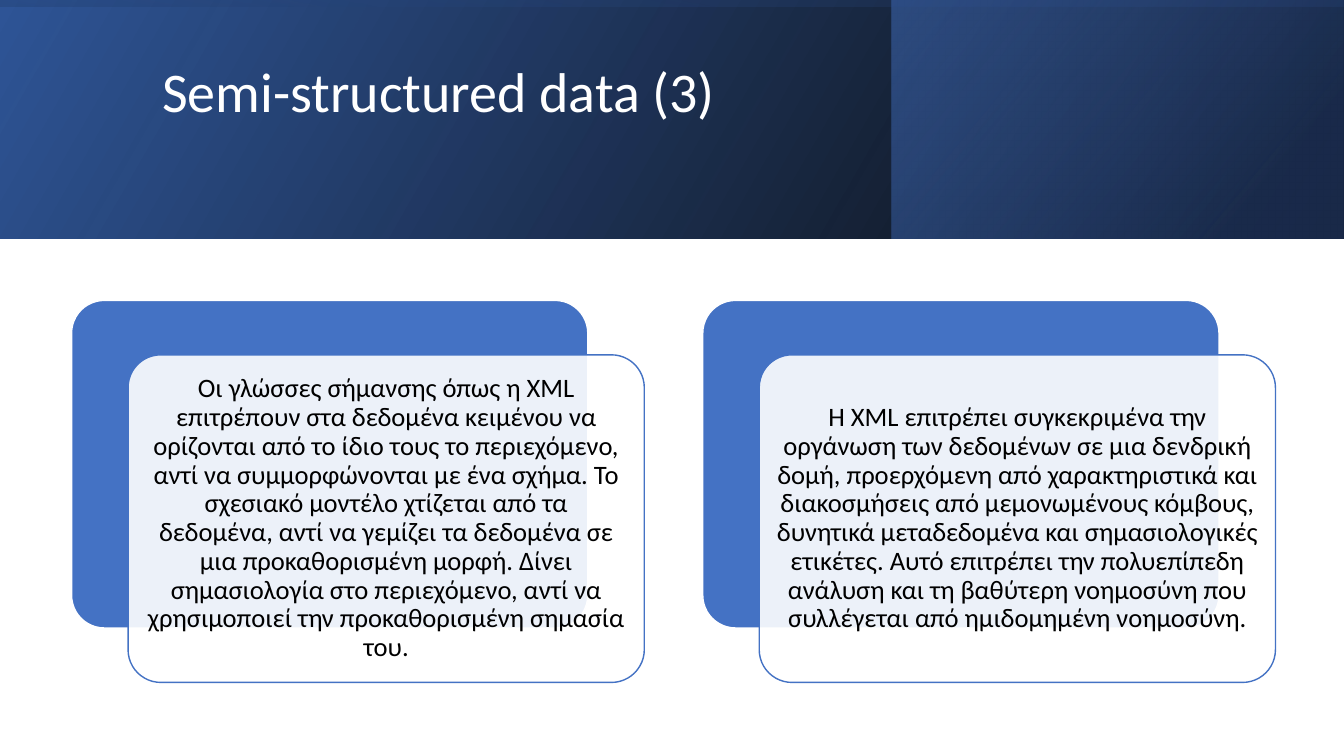
from dataclasses import dataclass

import pptx
import pptx.dml.color
import pptx.enum.shapes
import pptx.enum.text
import pptx.oxml.ns
import pptx.oxml.xmlchemy
import pptx.util
from pptx.util import Inches

SHAPES = pptx.enum.shapes.MSO_SHAPE
ALIGN = pptx.enum.text.PP_ALIGN


@dataclass(frozen=True)
class Theme:
    font: str = "Calibri"
    title_size: int = 40
    body_size: int = 19
    white: str = "FFFFFF"
    black: str = "000000"
    blue: str = "4472C4"
    deep_blue: str = "2F5597"
    navy: str = "203864"


@dataclass(frozen=True)
class Stop:
    position: float
    color: str
    opacity: int


@dataclass(frozen=True)
class Band:
    """One gradient layer of the header; angle is clockwise."""
    left: float
    top: float
    width: float
    height: float
    stops: tuple[Stop, Stop]
    angle: int
    rotation: int = 0


THEME = Theme()
SLIDE_WIDTH, SLIDE_HEIGHT, HEADER_HEIGHT = 13.33, 7.5, 2.37

BANDS = (
    Band(0, 0, SLIDE_WIDTH, HEADER_HEIGHT,
         (Stop(0, THEME.black, 96), Stop(1, THEME.deep_blue, 100)), 330),
    Band(8.84, 0, 4.48, HEADER_HEIGHT,
         (Stop(0.19, THEME.navy, 68), Stop(1, THEME.blue, 48)), 320),
    Band(5.48, -5.48, HEADER_HEIGHT, SLIDE_WIDTH,
         (Stop(0.23, THEME.deep_blue, 16), Stop(0.99, THEME.black, 45)), 350, 270),
)

CARD_LEFT, CARD_TOP, CARD_PITCH = 0.71, 2.98, 6.26
CARD_WIDTH, CARD_HEIGHT = 5.12, 3.25
PANEL_SHIFT_X, PANEL_SHIFT_Y, TEXT_INSET = 0.56, 0.54, 0.1
CARD_TEXTS = (
    "Οι γλώσσες σήμανσης όπως η XML επιτρέπουν στα δεδομένα κειμένου να "
    "ορίζονται από το ίδιο τους το περιεχόμενο, αντί να συμμορφώνονται με ένα "
    "σχήμα. Το σχεσιακό μοντέλο χτίζεται από τα δεδομένα, αντί να γεμίζει τα "
    "δεδομένα σε μια προκαθορισμένη μορφή. Δίνει σημασιολογία στο περιεχόμενο, "
    "αντί να χρησιμοποιεί την προκαθορισμένη σημασία του.",
    "Η XML επιτρέπει συγκεκριμένα την οργάνωση των δεδομένων σε μια δενδρική "
    "δομή, προερχόμενη από χαρακτηριστικά και διακοσμήσεις από μεμονωμένους "
    "κόμβους, δυνητικά μεταδεδομένα και σημασιολογικές ετικέτες. Αυτό επιτρέπει "
    "την πολυεπίπεδη ανάλυση και τη βαθύτερη νοημοσύνη που συλλέγεται από "
    "ημιδομημένη νοημοσύνη.",
)


def rgb(color: str) -> pptx.dml.color.RGBColor:
    return pptx.dml.color.RGBColor.from_string(color)


def set_opacity(shape, opacities: list[int]) -> None:
    """Give the fill colours of a shape, in order, their opacity in percent."""
    name = pptx.oxml.ns.qn("a:srgbClr")
    colors = list(shape._element.spPr.iter(name))
    for color, opacity in zip(colors, opacities):
        alpha = pptx.oxml.xmlchemy.OxmlElement("a:alpha")
        alpha.set("val", str(opacity * 1000))
        color.append(alpha)


def add_band(page, band: Band) -> None:
    shape = page.shapes.add_shape(
        SHAPES.RECTANGLE, Inches(band.left), Inches(band.top),
        Inches(band.width), Inches(band.height))
    shape.shadow.inherit = False
    shape.line.fill.background()
    shape.rotation = band.rotation
    shape._element.spPr.xfrm.set("flipH", "1")
    shape.fill.gradient()
    shape.fill.gradient_angle = 360 - band.angle
    for target, stop in zip(shape.fill.gradient_stops, band.stops):
        target.position = stop.position
        target.color.rgb = rgb(stop.color)
    set_opacity(shape, [stop.opacity for stop in band.stops])


def add_rounded(page, left: float, top: float, *, fill: str, line: str,
                opacity: int = 100) -> None:
    shape = page.shapes.add_shape(
        SHAPES.ROUNDED_RECTANGLE, Inches(left), Inches(top),
        Inches(CARD_WIDTH), Inches(CARD_HEIGHT))
    shape.adjustments[0] = 0.1
    shape.shadow.inherit = False
    shape.fill.solid()
    shape.fill.fore_color.rgb = rgb(fill)
    if opacity < 100:
        set_opacity(shape, [opacity])
    shape.line.color.rgb = rgb(line)
    shape.line.width = pptx.util.Pt(1)


def add_text(page, text: str, *, left: float, top: float, width: float,
             height: float, size: int, color: str, align=ALIGN.LEFT,
             side_inset: float = 0.1, top_inset: float = 0.05,
             bottom_inset: float = 0.05) -> None:
    box = page.shapes.add_textbox(
        Inches(left), Inches(top), Inches(width), Inches(height))
    frame = box.text_frame
    frame.word_wrap = True
    frame.vertical_anchor = pptx.enum.text.MSO_ANCHOR.MIDDLE
    frame.margin_left = frame.margin_right = Inches(side_inset)
    frame.margin_top = Inches(top_inset)
    frame.margin_bottom = Inches(bottom_inset)
    para = frame.paragraphs[0]
    para.alignment = align
    para.line_spacing = 0.9
    span = para.add_run()
    span.text = text
    span.font.name = THEME.font
    span.font.size = pptx.util.Pt(size)
    span.font.color.rgb = rgb(color)


def add_card(page, left: float, text: str) -> None:
    panel_left, panel_top = left + PANEL_SHIFT_X, CARD_TOP + PANEL_SHIFT_Y
    add_rounded(page, left, CARD_TOP, fill=THEME.blue, line=THEME.white)
    add_rounded(page, panel_left, panel_top, fill=THEME.white,
                line=THEME.blue, opacity=90)
    add_text(page, text, left=panel_left + TEXT_INSET, top=panel_top + TEXT_INSET,
             width=CARD_WIDTH - 2 * TEXT_INSET, height=CARD_HEIGHT - 2 * TEXT_INSET,
             size=THEME.body_size, color=THEME.black, align=ALIGN.CENTER,
             side_inset=0.07, top_inset=0.08, bottom_inset=0.08)


def main() -> None:
    deck = pptx.Presentation()
    deck.slide_width, deck.slide_height = Inches(SLIDE_WIDTH), Inches(SLIDE_HEIGHT)
    page = deck.slides.add_slide(deck.slide_layouts[6])

    # Header: layered gradients with the title
    for band in BANDS:
        add_band(page, band)
    add_text(page, "Semi-structured data (3)", left=1.51, top=0.38, width=10.63,
             height=1.72, size=THEME.title_size, color=THEME.white,
             bottom_inset=0.66)

    # Two cards side by side
    for index, text in enumerate(CARD_TEXTS):
        add_card(page, CARD_LEFT + index * CARD_PITCH, text)

    deck.save("out.pptx")


if __name__ == "__main__":
    main()
